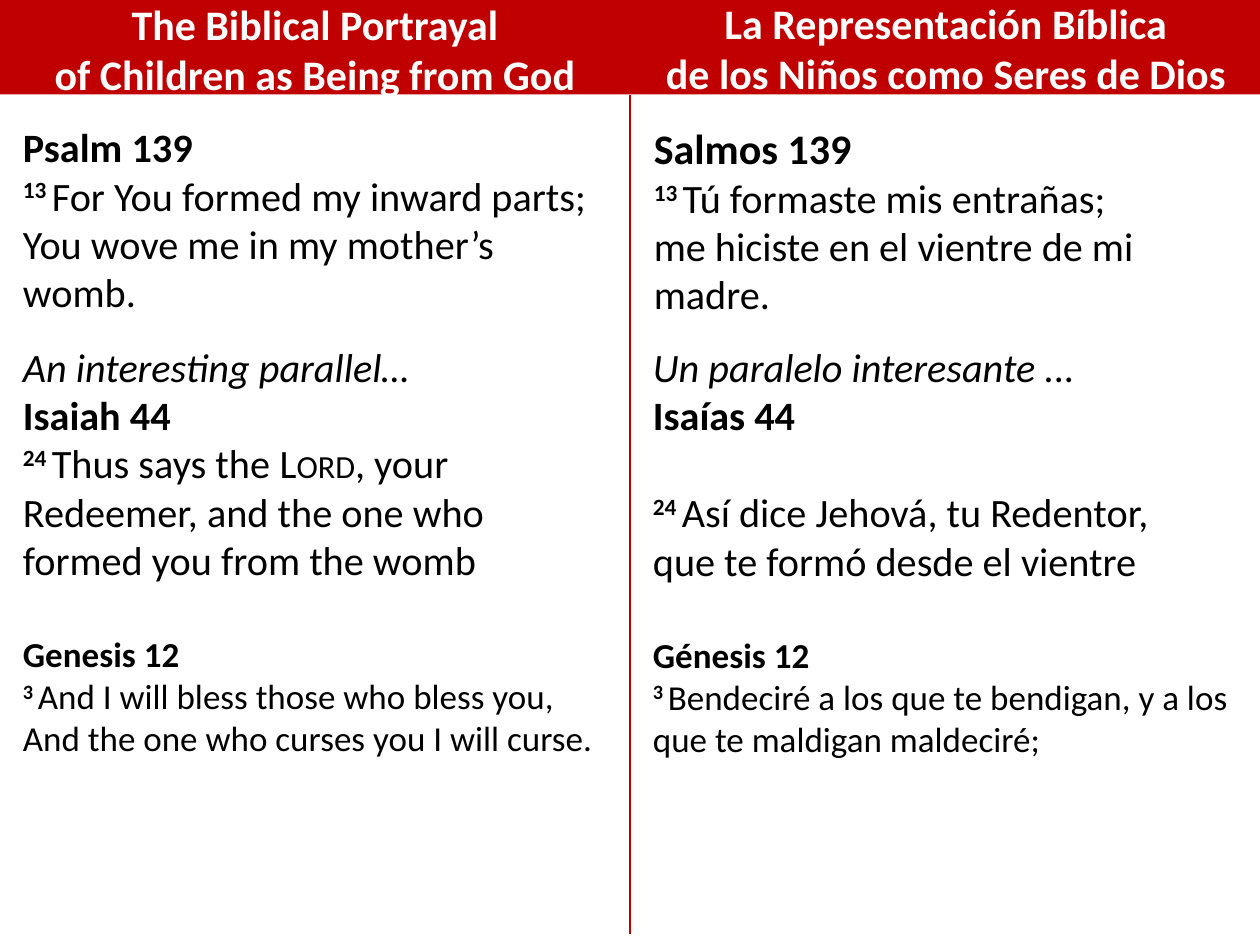
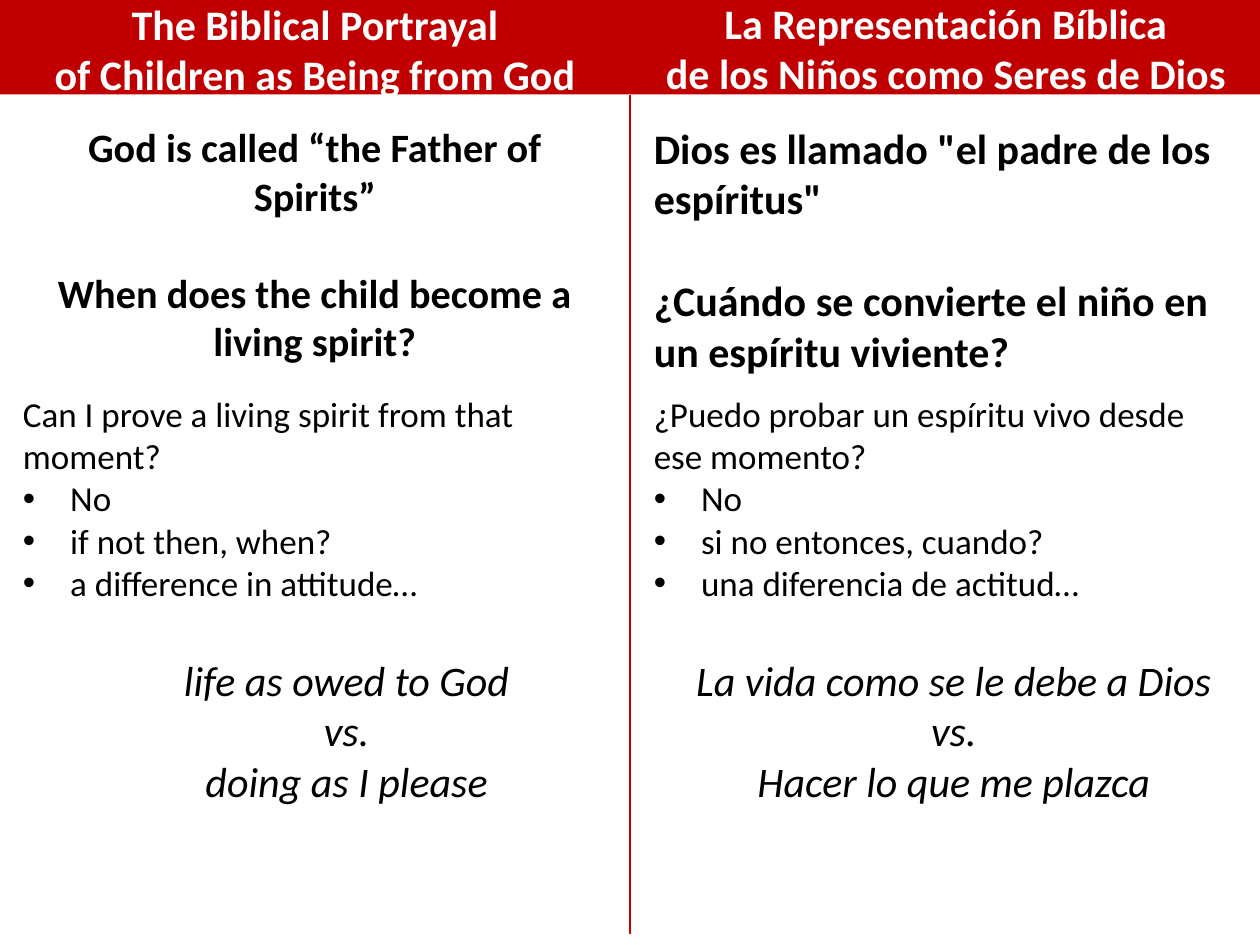
import pptx
import pptx.dml.color
import pptx.enum.shapes
import pptx.enum.text
import pptx.oxml.ns
import pptx.util
import lxml.etree

Pt = pptx.util.Pt
COLORS = {"red": "C00000", "white": "FFFFFF", "black": "000000"}
FONT = "Calibri"
COLUMN_WIDTH = 348
LEFT, RIGHT = 6, 366.5
BAND_HEIGHT = 54
UPPER_TOP = 66.5
BULLET_INDENT = 27


def rgb(name):
    return pptx.dml.color.RGBColor.from_string(COLORS[name])


def add_text(page, left, top, width, height, paragraphs, color="black"):
    box = page.shapes.add_textbox(Pt(left), Pt(top), Pt(width), Pt(height))
    frame = box.text_frame
    frame.word_wrap = True
    frame.auto_size = pptx.enum.text.MSO_AUTO_SIZE.SHAPE_TO_FIT_TEXT
    for index, (size, spans, layout) in enumerate(paragraphs):
        para = frame.add_paragraph() if index else frame.paragraphs[0]
        para.space_before = Pt(layout.get("gap", 0))
        if layout.get("center"):
            para.alignment = pptx.enum.text.PP_ALIGN.CENTER
        properties = para._p.get_or_add_pPr()
        if "indent" in layout:
            para.level = 1
            properties.set("marL", str(Pt(layout["indent"])))
            properties.set("indent", "0")
        if layout.get("bullet"):
            properties.set("marL", str(Pt(BULLET_INDENT)))
            properties.set("indent", str(-Pt(BULLET_INDENT)))
            for tag, name, value in (("a:buFont", "typeface", "Arial"), ("a:buChar", "char", "•")):
                lxml.etree.SubElement(properties, pptx.oxml.ns.qn(tag)).set(name, value)
        for text, style in spans:
            span = para.add_run()
            span.text = text
            span.font.name = FONT
            span.font.size = Pt(layout.get("number_size", size) if style == "number" else size)
            span.font.color.rgb = rgb(color)
            span.font.bold = style in ("bold", "number")
            span.font.italic = style == "italic"
            if style == "number":
                span._r.get_or_add_rPr().set("baseline", "30000")
            if style == "small caps":
                span._r.get_or_add_rPr().set("cap", "small")


deck = pptx.Presentation()
deck.slide_width, deck.slide_height = Pt(720), Pt(540)

titles = [
    (8.5, -4.5, 343, ["The Biblical Portrayal", "of Children as Being from God"]),
    (RIGHT, -5, COLUMN_WIDTH, ["La Representación Bíblica", "de los Niños como Seres de Dios"]),
]

verses = [
    (LEFT, UPPER_TOP, 119, [
        (23, [("Psalm 139", "bold")], {}),
        (23, [("13 ", "number"), ("For You formed my inward parts;", "plain")], {}),
        (23, [("You wove me in my mother’s womb.", "plain")], {}),
    ]),
    (RIGHT, UPPER_TOP, 120, [
        (24, [("Salmos 139", "bold")], {}),
        (23, [("13 ", "number"), ("Tú formaste mis entrañas;", "plain")], {}),
        (23, [("me hiciste en el vientre de mi madre.", "plain")], {}),
    ]),
    (LEFT, 192, 247, [
        (23, [("An interesting parallel…", "italic")], {}),
        (23, [("Isaiah 44", "bold")], {}),
        (23, [("24 ", "number"), ("Thus says the ", "plain"), ("Lord", "small caps"),
              (", your Redeemer, and the one who formed you from the womb", "plain")], {}),
        (20, [("Genesis 12", "bold")], {"gap": 28}),
        (20, [("3 ", "number"), ("And I will bless those who bless you,", "plain")], {}),
        (20, [("And the one who curses you I will curse.", "plain")], {}),
    ]),
    (RIGHT - 0.5, 192, 238, [
        (23, [("Un paralelo interesante ...", "italic")], {}),
        (23, [("Isaías 44", "bold")], {}),
        (23, [("24 ", "number"), ("Así dice Jehová, tu Redentor,", "plain")], {"gap": 28}),
        (23, [("que te formó desde el vientre", "plain")], {}),
        (20, [("Génesis 12", "bold")], {"gap": 28}),
        (20, [("3 ", "number"),
              ("Bendeciré a los que te bendigan, y a los que te maldigan maldeciré;", "plain")], {}),
    ]),
]

questions = [
    (LEFT, 147, 23, 28, True,
     ["God is called “the Father of Spirits”", "When does the child become a living spirit?"]),
    (RIGHT, 153, 24, 29.3, False,
     ['Dios es llamado "el padre de los espíritus"',
      "¿Cuándo se convierte el niño en un espíritu viviente?"]),
]
answers = [
    (LEFT, 36, "Can I prove a living spirit from that moment?",
     ["No", "if not then, when?", "a difference in attitude…"],
     ["life as owed to God", "vs.", "doing as I please"]),
    (RIGHT, 9, "¿Puedo probar un espíritu vivo desde ese momento?",
     ["No", "si no entonces, cuando?", "una diferencia de actitud…"],
     ["La vida como se le debe a Dios", "vs.", "Hacer lo que me plazca"]),
]

spirit = []
for left, height, size, gap, center, lines in questions:
    spirit.append((left, UPPER_TOP, height, [
        (size, [(line, "bold")], {"center": center, "gap": gap * index})
        for index, line in enumerate(lines)
    ]))
for left, indent, question, replies, contrast in answers:
    paragraphs = [(20, [(question, "plain")], {})]
    paragraphs += [(20, [(reply, "plain")], {"bullet": True}) for reply in replies]
    paragraphs += [
        (24, [(line, "italic")], {"center": True, "indent": indent, "gap": 0 if index else 29.3})
        for index, line in enumerate(contrast)
    ]
    spirit.append((left, 221, 245, paragraphs))

for columns in (verses, spirit):
    page = deck.slides.add_slide(deck.slide_layouts[6])
    band = page.shapes.add_shape(
        pptx.enum.shapes.MSO_SHAPE.RECTANGLE, 0, 0, deck.slide_width, Pt(BAND_HEIGHT))
    band.shadow.inherit = False
    band.fill.solid()
    band.fill.fore_color.rgb = rgb("red")
    band.line.fill.background()

    divider = page.shapes.add_connector(
        pptx.enum.shapes.MSO_CONNECTOR.STRAIGHT, Pt(360), Pt(BAND_HEIGHT), Pt(360), Pt(534))
    divider.begin_connect(band, 2)
    divider.line.color.rgb = rgb("red")
    divider.line.width = Pt(0.75)
    lxml.etree.SubElement(divider._element.spPr, pptx.oxml.ns.qn("a:effectLst"))

    for left, top, width, lines in titles:
        add_text(page, left, top, width, 65.5,
                 [(24, [(line, "bold")], {"center": True}) for line in lines], "white")
    for left, top, height, paragraphs in columns:
        add_text(page, left, top, COLUMN_WIDTH, height, paragraphs)

deck.save("out.pptx")
